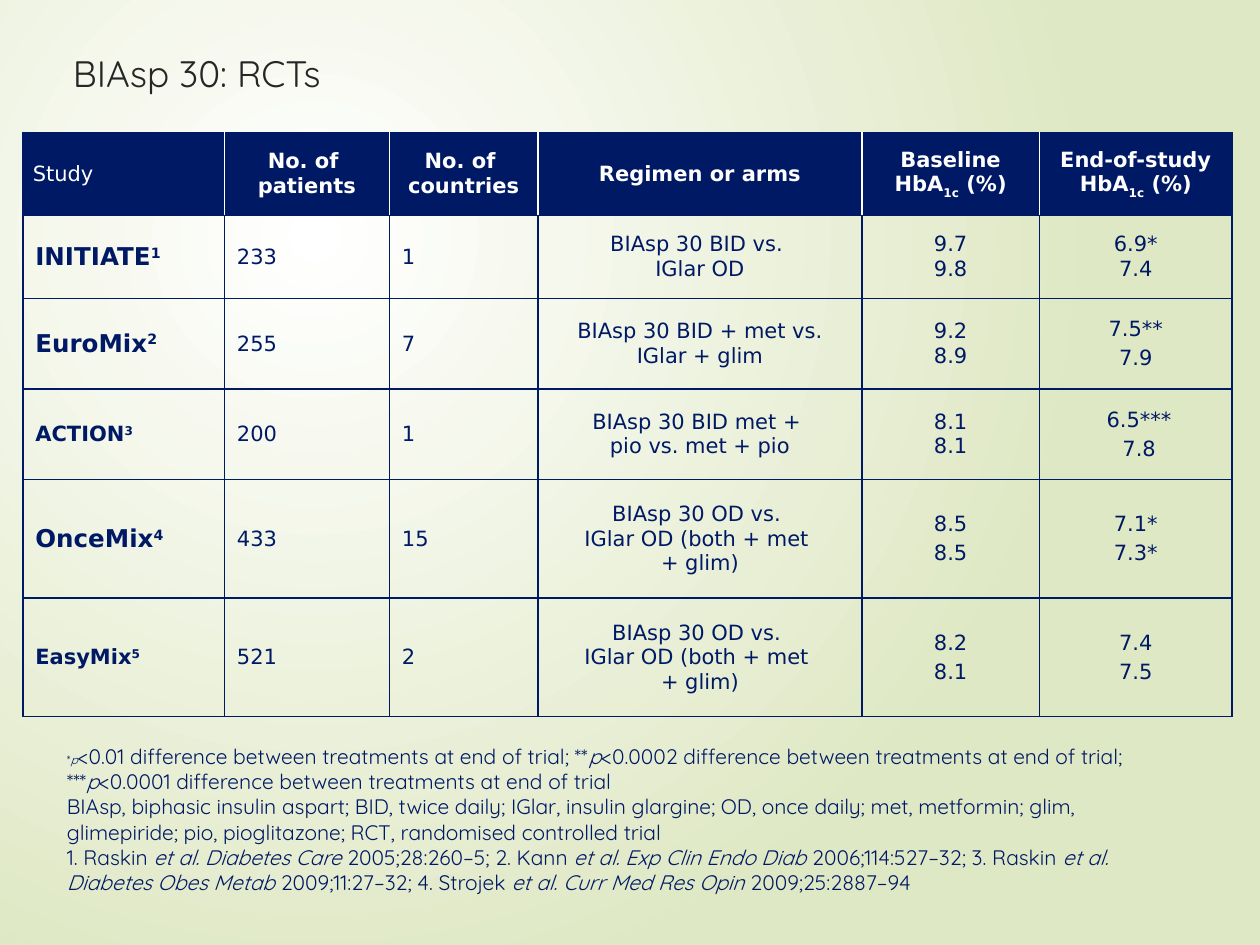
from lxml import etree
from pptx import Presentation
from pptx.dml.color import RGBColor
from pptx.enum.text import MSO_ANCHOR, PP_ALIGN
from pptx.oxml.ns import qn
from pptx.util import Pt

NAVY = RGBColor(0x00, 0x19, 0x65)
WHITE = RGBColor(0xFF, 0xFF, 0xFF)
CHARCOAL = RGBColor(0x26, 0x26, 0x26)
PALE_GREEN = RGBColor(0xDF, 0xE8, 0xC4)
TOP, MIDDLE, BOTTOM = MSO_ANCHOR.TOP, MSO_ANCHOR.MIDDLE, MSO_ANCHOR.BOTTOM
LEFT, CENTER = PP_ALIGN.LEFT, PP_ALIGN.CENTER
SUPERSCRIPT, SUBSCRIPT = "30000", "-25000"

COLUMN_WIDTHS = [115.2, 94.3, 85, 185, 101.5, 110.2]
ROW_HEIGHTS = [47.5, 47.5, 51.8, 51.8, 67.7, 67.7]
# Within a text, | switches accent on and off, \v breaks a line, \n a paragraph.
HEADERS = ["Study", "No. of \vpatients", "No. of \vcountries", "Regimen or arms",
           "Baseline HbA|1c| (%)", "End-of-study HbA|1c| (%)"]
STUDIES = [
    ("INITIATE|1|", 14, "233", "1", "BIAsp 30 BID vs. \vIGlar OD", "9.7\v9.8", "6.9*\v7.4"),
    ("EuroMix|2|", 14, "255", "7", "BIAsp 30 BID + met vs. IGlar + glim",
     "9.2\v8.9", "7.5**\n7.9"),
    ("ACTION|3|", 12, "200", "1", "BIAsp 30 BID met + \vpio vs. met + pio",
     "8.1\v8.1", " 6.5***\n 7.8"),
    ("OnceMix|4|", 14, "433", "15", "BIAsp 30 OD vs. \vIGlar OD (both + met \v+ glim)",
     "8.5\n8.5", "7.1*\n7.3*"),
    ("EasyMix|5|", 12, "521", "2", "BIAsp 30 OD vs. \vIGlar OD (both + met \v+ glim)",
     "8.2\n8.1", "7.4\n7.5"),
]
NOTES = (
    "*|p|<0.01 difference between treatments at end of trial; **|p|<0.0002 difference "
    "between treatments at end of trial; ***|p|<0.0001 difference between treatments "
    "at end of trial\n"
    "BIAsp, biphasic insulin aspart; BID, twice daily; IGlar, insulin glargine; "
    "OD, once daily; met, metformin; glim, glimepiride; pio, pioglitazone; "
    "RCT, randomised controlled trial\n"
    "1. Raskin |et al. Diabetes Care |2005;28:260–5; 2. Kann |et al. Exp Clin Endo Diab |"
    "2006;114:527–32; 3. Raskin |et al. Diabetes Obes Metab |2009;11:27–32; "
    "4. Strojek |et al. Curr Med Res Opin |2009;25:2887–94"
)


def write_text(frame, text, font="DejaVu Sans", size=12, color=NAVY, bold=False,
               align=LEFT, space_before=0, baseline=None):
    """Fill a text frame; accented parts are italic unless a baseline shift is given."""
    for index, content in enumerate(text.split("\n")):
        paragraph = frame.add_paragraph() if index else frame.paragraphs[0]
        paragraph.alignment = align
        paragraph.space_before = Pt(space_before)
        for part, segment in enumerate(content.split("|")):
            for line, words in enumerate(segment.split("\v")):
                if line:
                    paragraph.add_line_break()
                if not words:
                    continue
                run = paragraph.add_run()
                run.text = words
                run.font.name = font
                run.font.size = Pt(size)
                run.font.bold = bold
                run.font.color.rgb = color
                if part % 2 and baseline:
                    run.font._element.set("baseline", baseline)
                elif part % 2:
                    run.font.italic = True


class SlideBuilder:
    def __init__(self, presentation):
        self.slide = presentation.slides.add_slide(presentation.slide_layouts[6])
        self.heading_font = "Quicksand"

    def background(self, inner, outer):
        fill = self.slide.background.fill
        fill.gradient()
        for stop, color in zip(fill.gradient_stops, (inner, outer)):
            stop.color.rgb = color
        gradient = next(self.slide.element.iter(qn("a:gradFill")))
        gradient.remove(gradient.find(qn("a:lin")))
        circle = etree.SubElement(gradient, qn("a:path"), {"path": "circle"})
        etree.SubElement(circle, qn("a:fillToRect"),
                         {"l": "50000", "t": "50000", "r": "100000", "b": "100000"})

    def text_box(self, text, left, top, width, height, anchor=TOP, inset=7.2, **style):
        box = self.slide.shapes.add_textbox(Pt(left), Pt(top), Pt(width), Pt(height))
        frame = box.text_frame
        frame.word_wrap = True
        frame.vertical_anchor = anchor
        frame.margin_left = Pt(inset)
        write_text(frame, text, font=self.heading_font, **style)
        return frame

    def table(self, left, top, widths, heights):
        frame = self.slide.shapes.add_table(len(heights), len(widths), Pt(left), Pt(top),
                                            Pt(sum(widths)), Pt(sum(heights)))
        table = frame.table
        table.first_row = table.horz_banding = False
        for column, width in zip(table.columns, widths):
            column.width = Pt(width)
        for row, height in zip(table.rows, heights):
            row.height = Pt(height)
        return table

    def cell(self, cell, text, fill=None, borders=(NAVY,) * 4, inset=7.2, **style):
        """Style one cell; borders are given as left, right, top, bottom."""
        cell.margin_left = cell.margin_right = Pt(inset)
        cell.margin_top = cell.margin_bottom = Pt(3)
        cell.vertical_anchor = MIDDLE
        properties = cell._tc.get_or_add_tcPr()
        for side, color in zip("LRTB", borders):
            line = etree.SubElement(properties, qn(f"a:ln{side}"), {"w": str(Pt(1))})
            solid = etree.SubElement(line, qn("a:solidFill"))
            etree.SubElement(solid, qn("a:srgbClr"), {"val": str(color)})
        if fill is None:
            cell.fill.background()
        else:
            cell.fill.solid()
            cell.fill.fore_color.rgb = fill
        write_text(cell.text_frame, text, **style)


def add_trials_table(builder):
    table = builder.table(13, 75.6, COLUMN_WIDTHS, ROW_HEIGHTS)
    last = len(HEADERS) - 1
    for column, text in enumerate(HEADERS):
        first = column == 0
        borders = (NAVY if first else WHITE, NAVY if column == last else WHITE, NAVY, NAVY)
        builder.cell(table.cell(0, column), text, fill=NAVY, borders=borders,
                     inset=5.8 if first else 7.2, color=WHITE, bold=not first,
                     align=LEFT if first else CENTER,
                     space_before=0 if first else 2.4, baseline=SUBSCRIPT)
    for row, (name, name_size, *values) in enumerate(STUDIES, start=1):
        builder.cell(table.cell(row, 0), name, size=name_size, bold=True,
                     baseline=SUPERSCRIPT)
        for column, text in enumerate(values, start=1):
            builder.cell(table.cell(row, column), text, space_before=2.4,
                         align=LEFT if column < 3 else CENTER)


def main():
    presentation = Presentation()
    presentation.slide_width, presentation.slide_height = Pt(720), Pt(540)
    builder = SlideBuilder(presentation)
    builder.background(WHITE, PALE_GREEN)
    add_trials_table(builder)
    builder.text_box("BIAsp 30: RCTs", 34.6, 25.2, 670, 41, size=21, color=CHARCOAL)
    notes = builder.text_box(NOTES, 38.2, 420.5, 643, 94.3, anchor=BOTTOM, inset=0)
    for run in notes.paragraphs[0].runs[:2]:
        run.font.size = Pt(6.8)
    presentation.save("out.pptx")


if __name__ == "__main__":
    main()
